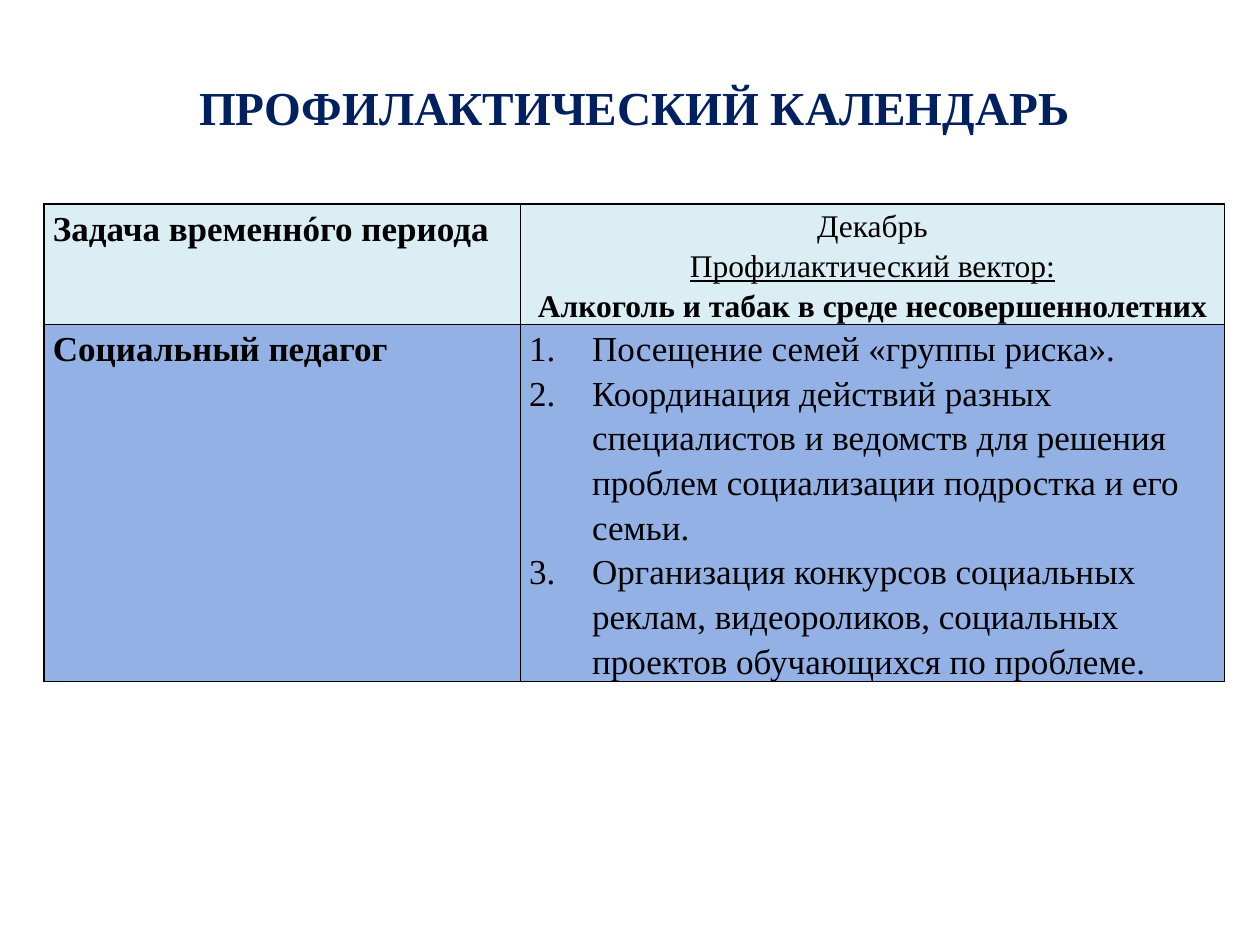
from dataclasses import dataclass, field

from lxml import etree
from pptx import Presentation, util as u
from pptx.dml.color import RGBColor
from pptx.enum import text
from pptx.oxml.ns import qn


@dataclass(frozen=True)
class Theme:
    """Colours, font and type sizes of the slide."""
    font: str = "Times New Roman"
    title: str = "002060"
    ink: str = "000000"
    header: str = "DBEEF4"
    body: str = "93B1E4"
    title_size: int = 27
    large: int = 20
    small: int = 18


THEME = Theme()


@dataclass(frozen=True)
class Line:
    """One paragraph of a table cell."""
    wording: str
    size: int = THEME.large
    style: dict = field(default_factory=dict)
    centred: bool = False
    numbered: bool = False


@dataclass(frozen=True)
class Row:
    """One table row with its fill, height and cells."""
    fill: str
    height: float
    cells: tuple


BOLD = {"bold": True}
COLUMN_WIDTHS = (3.78, 5.59)
ROWS = (
    Row(THEME.header, 0.95, (
        (Line("Задача временнóго периода", style=BOLD),),
        (Line("Декабрь", THEME.small, centred=True),
         Line("Профилактический вектор:", THEME.small, {"underline": True}, centred=True),
         Line("Алкоголь и табак в среде несовершеннолетних", THEME.small, BOLD, centred=True)),
    )),
    Row(THEME.body, 2.83, (
        (Line("Социальный педагог", style=BOLD),),
        tuple(Line(task, numbered=True) for task in (
            "Посещение семей «группы риска».",
            "Координация действий разных специалистов и ведомств для решения "
            "проблем социализации подростка и его семьи.",
            "Организация конкурсов социальных реклам, видеороликов, социальных "
            "проектов обучающихся по проблеме.")),
    )),
)


def format_run(run, size: int, colour: str, style: dict) -> None:
    """Apply the theme font and the given style to a run."""
    values = {"name": THEME.font, "size": u.Pt(size), "bold": False, **style}
    for name, value in values.items():
        setattr(run.font, name, value)
    run.font.color.rgb = RGBColor.from_string(colour)


def number_paragraph(paragraph) -> None:
    """Turn a paragraph into an item of a numbered list."""
    properties = paragraph._p.get_or_add_pPr()
    properties.set("marL", str(u.Inches(0.5)))
    properties.set("indent", str(u.Inches(-0.5)))
    etree.SubElement(properties, qn("a:buFont"), typeface="+mj-lt")
    etree.SubElement(properties, qn("a:buAutoNum"), type="arabicPeriod")


def add_borders(cell) -> None:
    """Draw a thin line on every side of a cell."""
    properties = cell._tc.get_or_add_tcPr()
    for position, side in enumerate(("lnL", "lnR", "lnT", "lnB")):
        line = etree.Element(qn(f"a:{side}"), w=str(u.Pt(1)))
        fill = etree.SubElement(line, qn("a:solidFill"))
        etree.SubElement(fill, qn("a:srgbClr"), val=THEME.ink)
        properties.insert(position, line)


def fill_cell(cell, lines: tuple, colour: str) -> None:
    """Write the lines of a cell and set its fill, margins and borders."""
    margins = {"margin_left": 0.07, "margin_right": 0.07, "margin_top": 0, "margin_bottom": 0}
    for name, value in margins.items():
        setattr(cell, name, u.Inches(value))
    cell.fill.solid()
    cell.fill.fore_color.rgb = RGBColor.from_string(colour)
    add_borders(cell)
    frame = cell.text_frame
    for index, line in enumerate(lines):
        paragraph = frame.add_paragraph() if index else frame.paragraphs[0]
        paragraph.line_spacing = 1.15
        if line.numbered:
            number_paragraph(paragraph)
        if line.centred:
            paragraph.alignment = text.PP_ALIGN.CENTER
        run = paragraph.add_run()
        run.text = line.wording
        format_run(run, line.size, THEME.ink, line.style)


def add_title(slide, wording: str) -> None:
    """Place and format the slide title."""
    title = slide.shapes.title
    box = {"left": 0.5, "top": 0.22, "width": 9.07, "height": 1.25}
    for name, value in box.items():
        setattr(title, name, u.Inches(value))
    title.text_frame.vertical_anchor = text.MSO_ANCHOR.MIDDLE
    paragraph = title.text_frame.paragraphs[0]
    paragraph.alignment = text.PP_ALIGN.CENTER
    run = paragraph.add_run()
    run.text = wording
    format_run(run, THEME.title_size, THEME.title, BOLD)


def add_calendar(slide) -> None:
    """Add the calendar table."""
    frame = slide.shapes.add_table(
        len(ROWS), len(COLUMN_WIDTHS), u.Inches(0.35), u.Inches(1.62),
        u.Inches(sum(COLUMN_WIDTHS)), u.Inches(sum(row.height for row in ROWS)))
    table = frame.table
    for column, width in zip(table.columns, COLUMN_WIDTHS):
        column.width = u.Inches(width)
    for table_row, row in zip(table.rows, ROWS):
        table_row.height = u.Inches(row.height)
        for cell, lines in zip(table_row.cells, row.cells):
            fill_cell(cell, lines, row.fill)


def main() -> None:
    """Build and save the presentation."""
    presentation = Presentation()
    presentation.slide_width = u.Inches(10)
    presentation.slide_height = u.Inches(7.5)
    slide = presentation.slides.add_slide(presentation.slide_layouts[5])
    add_calendar(slide)
    add_title(slide, "ПРОФИЛАКТИЧЕСКИЙ КАЛЕНДАРЬ")
    presentation.save("out.pptx")


if __name__ == "__main__":
    main()
